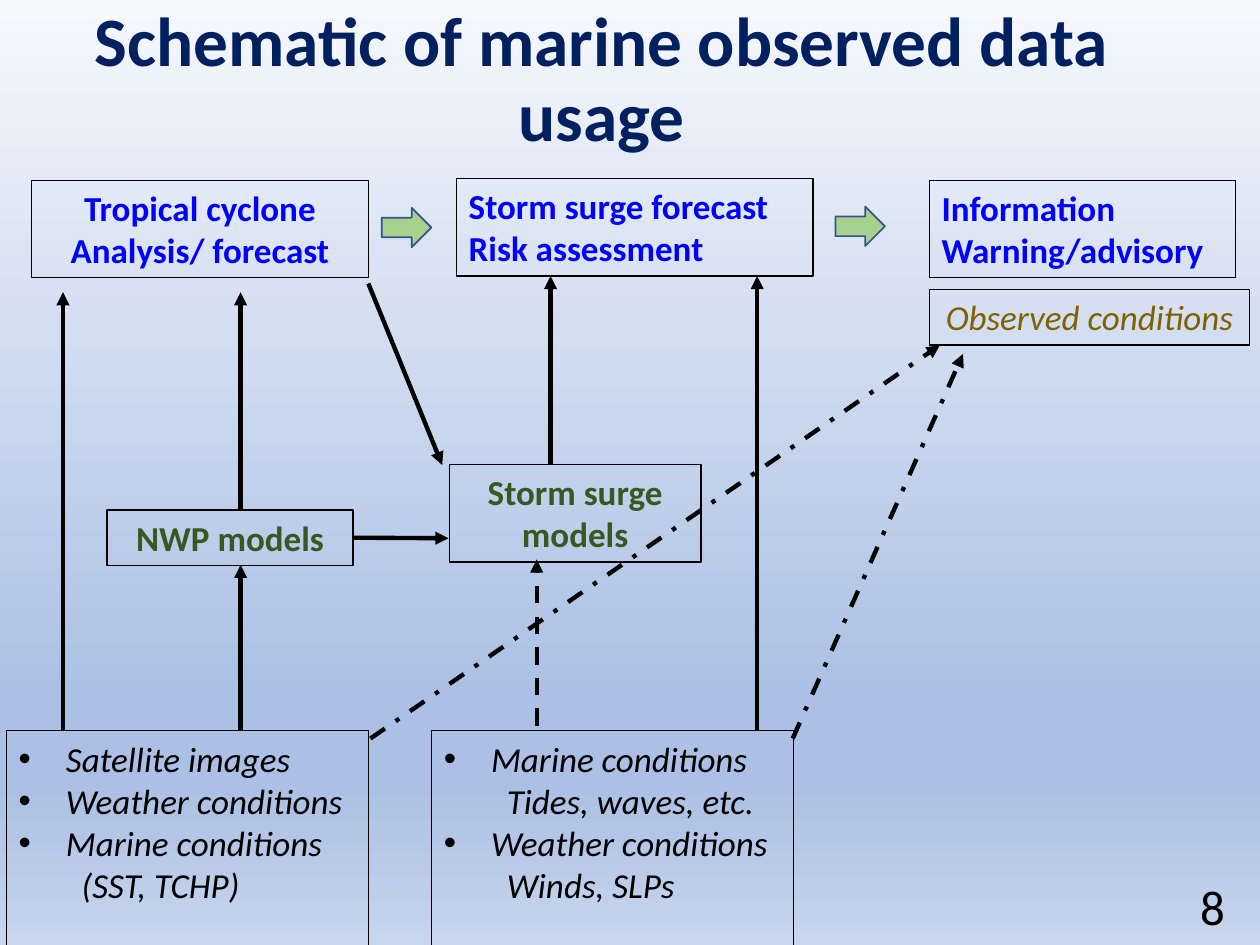
"""Build a slide showing how marine observations feed storm surge forecasts."""
from dataclasses import dataclass
from typing import Optional

import pptx
import pptx.dml.color
import pptx.enum.dml
import pptx.enum.shapes
import pptx.enum.text
import pptx.oxml
import pptx.oxml.ns
import pptx.util

Pt = pptx.util.Pt
ALIGN = pptx.enum.text.PP_ALIGN
ANCHOR = pptx.enum.text.MSO_ANCHOR
SHAPE = pptx.enum.shapes.MSO_SHAPE
DASH = pptx.enum.dml.MSO_LINE
BLACK, NAVY, BLUE, GREEN, BROWN = "000000", "002060", "0000FF", "385723", "806000"
BULLET_INDENT, PLAIN_INDENT = 27, 36
BACKGROUND_STOPS = [(0, "F6F8FC"), (74, "ABC0E4"), (83, "ABC0E4"), (100, "C7D5ED")]


@dataclass
class Label:
    left: float
    top: float
    width: float
    height: float
    text: str
    color: str
    align: ALIGN = ALIGN.LEFT
    size: float = 20
    bold: bool = False
    italic: bool = False
    framed: bool = True
    anchor: ANCHOR = ANCHOR.TOP
    spacing: float = 1.0
    bulleted: tuple[bool, ...] = ()


@dataclass
class Flow:
    start: tuple[float, float]
    end: tuple[float, float]
    dash: Optional[DASH] = None


LABELS = {
    "title": Label(3.6, 0, 680.4, 92.9, "Schematic of marine observed data usage", NAVY,
                   ALIGN.CENTER, 39.6, bold=True, framed=False, anchor=ANCHOR.MIDDLE, spacing=0.9),
    "cyclone data": Label(3.6, 417.6, 206.9, 126,
                          "Satellite images\nWeather conditions\nMarine conditions\n(SST, TCHP)",
                          BLACK, italic=True, bulleted=(True, True, True, False)),
    "surge data": Label(246.5, 417.6, 206.9, 126,
                        "Marine conditions\nTides, waves, etc.\nWeather conditions\nWinds, SLPs",
                        BLACK, italic=True, bulleted=(True, False, True, False)),
    "observed": Label(531, 165.5, 183.2, 31.7, "Observed conditions", BROWN, ALIGN.CENTER, italic=True),
    "cyclone": Label(18, 103, 192.5, 55.7, "Tropical cyclone Analysis/ forecast", BLUE,
                     ALIGN.CENTER, bold=True),
    "surge": Label(260.8, 102, 203.8, 55.7, "Storm surge forecast\nRisk assessment", BLUE, bold=True),
    "information": Label(531, 103, 175, 55.7, "Information\nWarning/advisory", BLUE, bold=True),
    "weather models": Label(61.2, 291.4, 140.6, 31.7, "NWP models", GREEN, ALIGN.CENTER, bold=True),
    "surge models": Label(256.7, 265.5, 144, 55.7, "Storm surge models", GREEN, ALIGN.CENTER, bold=True),
    "page number": Label(545, 503.3, 162, 28.8, "8", BLACK, ALIGN.RIGHT, 28,
                         framed=False, anchor=ANCHOR.MIDDLE),
}
FLOWS = [
    Flow((36, 417.6), (36, 167)),
    Flow((137.5, 417.6), (137.5, 322.8)),
    Flow((137.5, 291.4), (137.5, 167)),
    Flow((306.7, 414.7), (306.7, 319.7), DASH.DASH),
    Flow((314.6, 265.5), (314.6, 157.7)),
    Flow((210.5, 162), (252.7, 265.7)),
    Flow((432.7, 417.6), (432.7, 157.7)),
    Flow((453, 422), (550.3, 202.3), DASH.DASH_DOT),
    Flow((211.7, 422), (537, 197.3), DASH.DASH_DOT),
]
BLOCK_ARROWS = [(218.2, 118.8), (477.4, 118.1)]


def rgb(value: str) -> pptx.dml.color.RGBColor:
    """Turn a hex string into a colour."""
    return pptx.dml.color.RGBColor.from_string(value)


def add_child(parent, tag: str, **attributes: str):
    """Append a drawing element with the given attributes."""
    child = pptx.oxml.parse_xml(f"<a:{tag} {pptx.oxml.ns.nsdecls('a')}/>")
    for name, value in attributes.items():
        child.set(name, value)
    parent.append(child)
    return child


def paint_background(page) -> None:
    """Fill the page with the vertical blue gradient."""
    fill = page.background.fill
    fill.gradient()
    fill.gradient_angle = 270
    stops = page.background._cSld.find(".//" + pptx.oxml.ns.qn("a:gsLst"))
    for stop in list(stops):
        stops.remove(stop)
    for percent, color in BACKGROUND_STOPS:
        stop = add_child(stops, "gs", pos=str(percent * 1000))
        add_child(stop, "srgbClr", val=color)


def indent(para, bulleted: bool) -> None:
    """Give a list paragraph its indent and, if asked, its bullet."""
    properties = para._p.get_or_add_pPr()
    properties.set("marL", str(Pt(BULLET_INDENT if bulleted else PLAIN_INDENT)))
    properties.set("indent", str(-Pt(BULLET_INDENT) if bulleted else 0))
    if bulleted:
        add_child(properties, "buFont", typeface="Arial")
        add_child(properties, "buChar", char="•")


def draw_label(page, label: Label):
    """Draw a text box or an outlined rectangle with its text."""
    place = [Pt(value) for value in (label.left, label.top, label.width, label.height)]
    if label.framed:
        box = page.shapes.add_shape(SHAPE.RECTANGLE, *place)
        box.shadow.inherit = False
        box.fill.background()
        box.line.color.rgb = rgb(BLACK)
        box.line.width = Pt(0.75)
    else:
        box = page.shapes.add_textbox(*place)
    frame = box.text_frame
    frame.word_wrap = True
    frame.vertical_anchor = label.anchor
    frame.text = label.text
    for para in frame.paragraphs:
        para.alignment = label.align
        para.line_spacing = label.spacing
        for span in para.runs:
            span.font.name = "Calibri"
            span.font.size = Pt(label.size)
            span.font.bold = label.bold
            span.font.italic = label.italic
            span.font.color.rgb = rgb(label.color)
    for para, bulleted in zip(frame.paragraphs, label.bulleted):
        indent(para, bulleted)
    return box


def draw_flow(page, flow: Flow):
    """Draw a line with an arrowhead at its end."""
    points = [Pt(value) for value in (*flow.start, *flow.end)]
    connector = page.shapes.add_connector(pptx.enum.shapes.MSO_CONNECTOR.STRAIGHT, *points)
    connector.line.color.rgb = rgb(BLACK)
    connector.line.width = Pt(2.5)
    if flow.dash is not None:
        connector.line.dash_style = flow.dash
    add_child(connector.line._get_or_add_ln(), "tailEnd", type="triangle")
    add_child(connector._element.spPr, "effectLst")
    return connector


def draw_block_arrow(page, left: float, top: float) -> None:
    """Draw a green block arrow between two stages."""
    arrow = page.shapes.add_shape(SHAPE.RIGHT_ARROW, Pt(left), Pt(top), Pt(28.3), Pt(22.5))
    arrow.shadow.inherit = False
    arrow.fill.solid()
    arrow.fill.fore_color.rgb = rgb("A9D18E")
    arrow.line.color.rgb = rgb("325491")
    arrow.line.width = Pt(1)


def main() -> None:
    """Build and save the deck."""
    deck = pptx.Presentation()
    deck.slide_width, deck.slide_height = Pt(720), Pt(540)
    page = deck.slides.add_slide(deck.slide_layouts[6])
    paint_background(page)
    boxes = {name: draw_label(page, label) for name, label in LABELS.items()}
    for left, top in BLOCK_ARROWS:
        draw_block_arrow(page, left, top)
    for flow in FLOWS:
        draw_flow(page, flow)
    models_link = draw_flow(page, Flow((201.8, 307.3), (256.3, 307.6)))
    models_link.begin_connect(boxes["weather models"], 3)
    deck.save("out.pptx")


if __name__ == "__main__":
    main()
